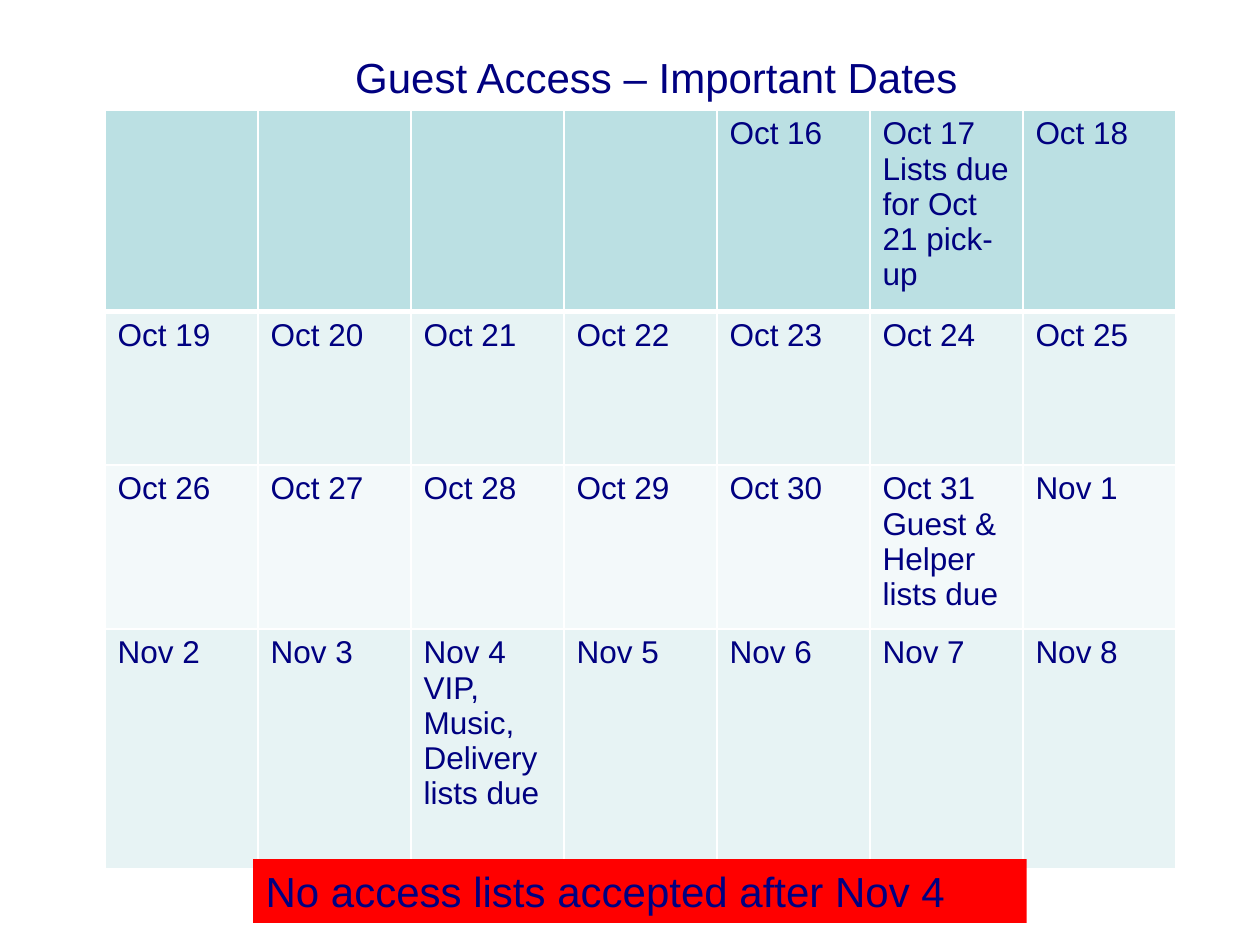
"""Build a one-slide calendar of guest access dates."""
import pptx
import pptx.dml.color
import pptx.enum.shapes
import pptx.enum.text
import pptx.oxml
import pptx.oxml.ns
import pptx.util

Pt = pptx.util.Pt

TITLE = "Guest Access – Important Dates"
BANNER = "No access lists accepted after Nov 4"
WEEKS = [
    ["", "", "", "", "Oct 16", "Oct 17\nLists due for Oct 21 pick-up", "Oct 18"],
    ["Oct 19", "Oct 20", "Oct 21", "Oct 22", "Oct 23", "Oct 24", "Oct 25"],
    ["Oct 26", "Oct 27", "Oct 28", "Oct 29", "Oct 30",
     "Oct 31\nGuest & Helper lists due", "Nov 1"],
    ["Nov 2", "Nov 3", "Nov 4\nVIP, Music, Delivery lists due", "Nov 5",
     "Nov 6", "Nov 7", "Nov 8"],
]
WEEK_HEIGHTS = [115.2, 87.8, 93.6, 136.8]

THEME = {
    "font": "Arial", "ink": "000080", "heading": 24, "date": 18,
    "weeks": ["BBE0E3", "E7F3F4", "F3F9FA", "E7F3F4"],
    "banner": "FF0000", "grid": "FFFFFF", "grid_width": 1, "first_rule": 3,
}
PAGE = (720, 540)
TITLE_BOX = (195.8, 25.9, 442, 36.4)
CALENDAR_BOX = (60, 62.8, 612, sum(WEEK_HEIGHTS))
BANNER_BOX = (144.7, 491, 442, 36.4)


def color(name):
    return pptx.dml.color.RGBColor.from_string(name)


def fill_solid(target, name):
    target.fill.solid()
    target.fill.fore_color.rgb = color(name)


def write(frame, text, size):
    frame.text = text
    for para in frame.paragraphs:
        para.alignment = pptx.enum.text.PP_ALIGN.LEFT
        for span in para.runs:
            span.font.name = THEME["font"]
            span.font.size = Pt(size)
            span.font.bold = False
            span.font.color.rgb = color(THEME["ink"])


def write_heading(box, text):
    frame = box.text_frame
    frame.word_wrap = True
    frame.auto_size = pptx.enum.text.MSO_AUTO_SIZE.NONE
    frame.vertical_anchor = pptx.enum.text.MSO_ANCHOR.TOP
    write(frame, text, THEME["heading"])


def add_borders(cell, bottom_width):
    widths = dict.fromkeys(("lnL", "lnR", "lnT"), THEME["grid_width"])
    widths["lnB"] = bottom_width
    properties = cell._tc.get_or_add_tcPr()
    for side, width in widths.items():
        properties.append(pptx.oxml.parse_xml(
            f'<a:{side} {pptx.oxml.ns.nsdecls("a")} w="{Pt(width)}"><a:solidFill>'
            f'<a:srgbClr val="{THEME["grid"]}"/></a:solidFill></a:{side}>'))


def add_calendar(page):
    left, top, width, height = CALENDAR_BOX
    day_count = len(WEEKS[0])
    table = page.shapes.add_table(
        len(WEEKS), day_count, Pt(left), Pt(top), Pt(width), Pt(height)).table
    table.first_row = False
    table.horz_banding = False
    for column in table.columns:
        column.width = Pt(width / day_count)
    for week, days in enumerate(WEEKS):
        table.rows[week].height = Pt(WEEK_HEIGHTS[week])
        rule = THEME["grid_width"] if week else THEME["first_rule"]
        for day, text in enumerate(days):
            cell = table.cell(week, day)
            add_borders(cell, rule)
            fill_solid(cell, THEME["weeks"][week])
            write(cell.text_frame, text, THEME["date"])


def main():
    deck = pptx.Presentation()
    deck.slide_width, deck.slide_height = map(Pt, PAGE)
    page = deck.slides.add_slide(deck.slide_layouts[5])

    title = page.shapes.title
    title.left, title.top, title.width, title.height = map(Pt, TITLE_BOX)
    write_heading(title, TITLE)

    add_calendar(page)

    banner = page.shapes.add_shape(
        pptx.enum.shapes.MSO_SHAPE.RECTANGLE, *map(Pt, BANNER_BOX))
    banner.shadow.inherit = False
    banner.line.fill.background()
    fill_solid(banner, THEME["banner"])
    write_heading(banner, BANNER)

    deck.save("out.pptx")


if __name__ == "__main__":
    main()
